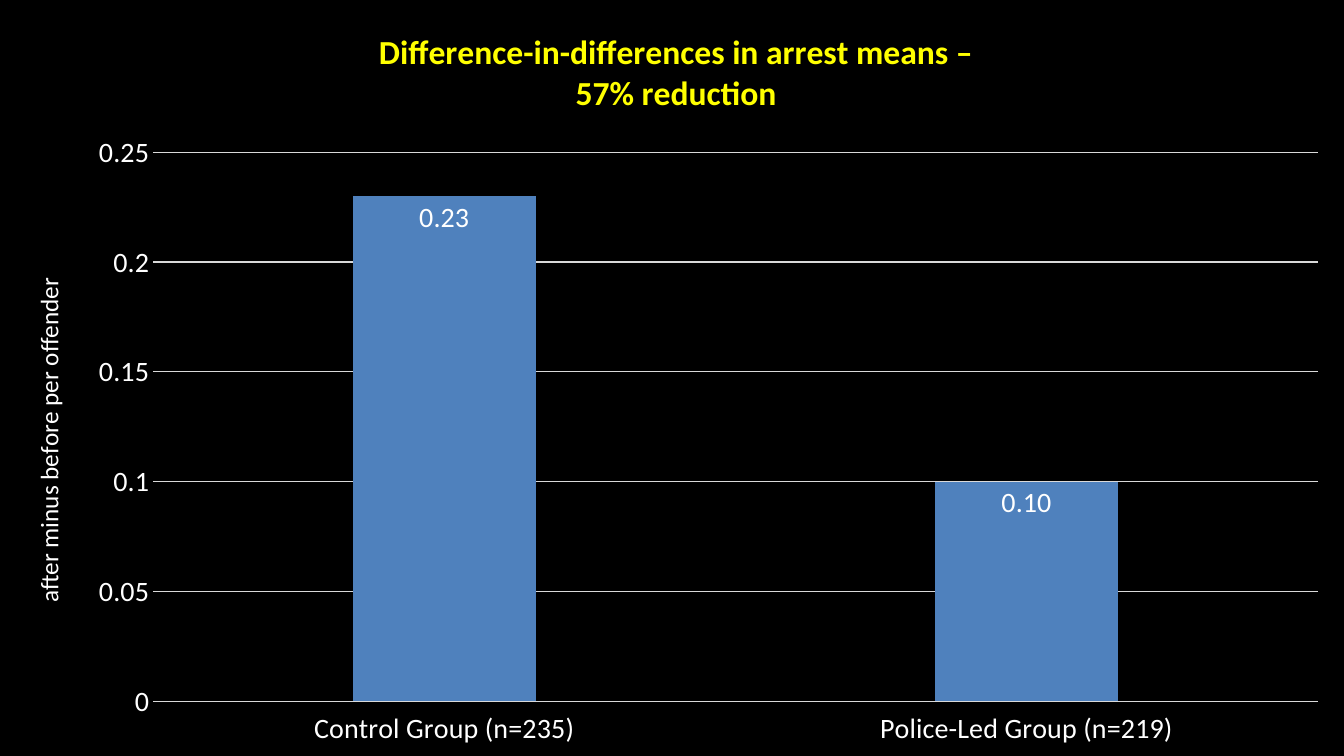
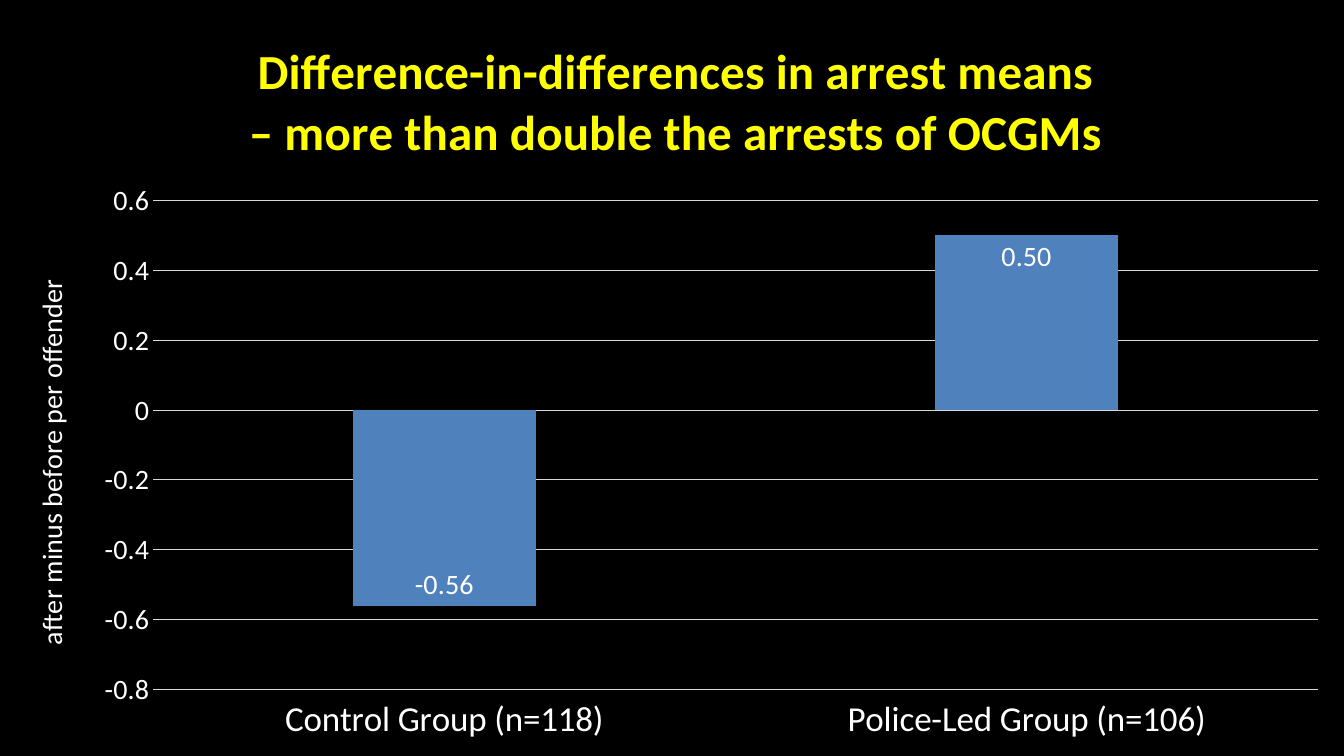
from dataclasses import dataclass

from lxml import etree
from pptx import Presentation
from pptx import util as u
from pptx.chart import data as cd
from pptx.dml.color import RGBColor
from pptx.enum import chart as ch
from pptx.oxml.ns import qn

BLACK = RGBColor(0x00, 0x00, 0x00)
WHITE = RGBColor(0xFF, 0xFF, 0xFF)
YELLOW = RGBColor(0xFF, 0xFF, 0x00)
BLUE = RGBColor(0x4F, 0x81, 0xBD)
GREY = RGBColor(0xD9, 0xD9, 0xD9)
FACE = "Calibri"
WIDE, HIGH = 13.33, 7.5
LEFT = 0.08
PLOT_X, PLOT_W = 1.52, 11.55


@dataclass(frozen=True)
class Panel:
    """One full-slide bar chart; lengths in inches, sizes in points."""
    title: tuple[str, ...]
    size: int
    groups: tuple[str, ...]
    vals: tuple[float, ...]
    scale: tuple[float, float, float]  # low, high, step
    top: float
    plot_y: float
    plot_h: float
    cat_size: int
    name_size: int


PANELS = (
    Panel(("Difference-in-differences in arrest means –", "57% reduction"), 24,
          ("Control Group (n=235)", "Police-Led Group (n=219)"), (0.23, 0.1),
          (0, 0.25, 0.05), 0.08, 1.51, 5.45, 20, 18),
    Panel(("Difference-in-differences in arrest means",
           "– more than double the arrests of OCGMs"), 35,
          ("Control Group (n=118)", "Police-Led Group (n=106)"), (-0.56, 0.5),
          (-0.8, 0.6, 0.2), 0.17, 1.99, 4.85, 25, 20),
)


def style(font, size: int, color: RGBColor = WHITE, bold: bool = False) -> None:
    font.name, font.size, font.bold = FACE, u.Pt(size), bold
    font.color.rgb = color


def write(frame, lines: tuple[str, ...], size: int,
          color: RGBColor = WHITE, bold: bool = False) -> None:
    """Put each line in its own paragraph, as one run."""
    for i, line in enumerate(lines):
        para = frame.paragraphs[0] if i == 0 else frame.add_paragraph()
        run = para.add_run()
        run.text = line
        style(run.font, size, color, bold)


def rule(line) -> None:
    line.color.rgb = GREY
    line.width = u.Pt(0.75)


def place(chart, panel: Panel) -> None:
    """Fix the inner plot area as fractions of the chart."""
    area = chart._chartSpace.chart.plotArea
    for old in area.findall(qn("c:layout")):
        area.remove(old)
    layout = etree.Element(qn("c:layout"))
    area.insert(0, layout)
    manual = etree.SubElement(layout, qn("c:manualLayout"))
    wide, high = WIDE - LEFT, HIGH - panel.top
    parts = (("layoutTarget", "inner"), ("xMode", "edge"), ("yMode", "edge"),
             ("x", (PLOT_X - LEFT) / wide),
             ("y", (panel.plot_y - panel.top) / high),
             ("w", PLOT_W / wide), ("h", panel.plot_h / high))
    for tag, val in parts:
        etree.SubElement(manual, qn(f"c:{tag}")).set("val", str(val))


def draw(slide, panel: Panel) -> None:
    data = cd.CategoryChartData()
    data.categories = panel.groups
    data.add_series("Series 1", panel.vals)
    box = map(u.Inches, (LEFT, panel.top, WIDE - LEFT, HIGH - panel.top))
    chart = slide.shapes.add_chart(
        ch.XL_CHART_TYPE.COLUMN_CLUSTERED, *box, data).chart
    style(chart.font, 20)
    chart.has_legend = False
    chart.has_title = True
    write(chart.chart_title.text_frame, panel.title, panel.size, YELLOW, True)
    chart.chart_title.include_in_layout = False

    # Bars and their labels
    plot = chart.plots[0]
    plot.gap_width, plot.overlap = 219, -27
    plot.vary_by_categories = False
    bars = plot.series[0]
    bars.invert_if_negative = False
    bars.format.fill.solid()
    bars.format.fill.fore_color.rgb = BLUE
    tags = bars.data_labels
    tags.show_value = True
    tags.position = ch.XL_LABEL_POSITION.INSIDE_END
    tags.number_format, tags.number_format_is_linked = "#,##0.00", False
    style(tags.font, 20)

    # Axes
    cat, val = chart.category_axis, chart.value_axis
    for axis, size in ((cat, panel.cat_size), (val, 20)):
        axis.major_tick_mark = axis.minor_tick_mark = ch.XL_TICK_MARK.NONE
        style(axis.tick_labels.font, size)
    cat.tick_label_position = ch.XL_TICK_LABEL_POSITION.LOW
    rule(cat.format.line)
    val.minimum_scale, val.maximum_scale, val.major_unit = panel.scale
    val.format.line.fill.background()
    rule(val.major_gridlines.format.line)
    val.has_title = True
    write(val.axis_title.text_frame, ("after minus before per offender",),
          panel.name_size)
    place(chart, panel)


def main() -> None:
    prs = Presentation()
    prs.slide_width, prs.slide_height = u.Inches(WIDE), u.Inches(HIGH)
    back = prs.slide_master.background.fill
    back.solid()
    back.fore_color.rgb = BLACK
    for panel in PANELS:
        draw(prs.slides.add_slide(prs.slide_layouts[6]), panel)
    prs.save("out.pptx")


if __name__ == "__main__":
    main()
